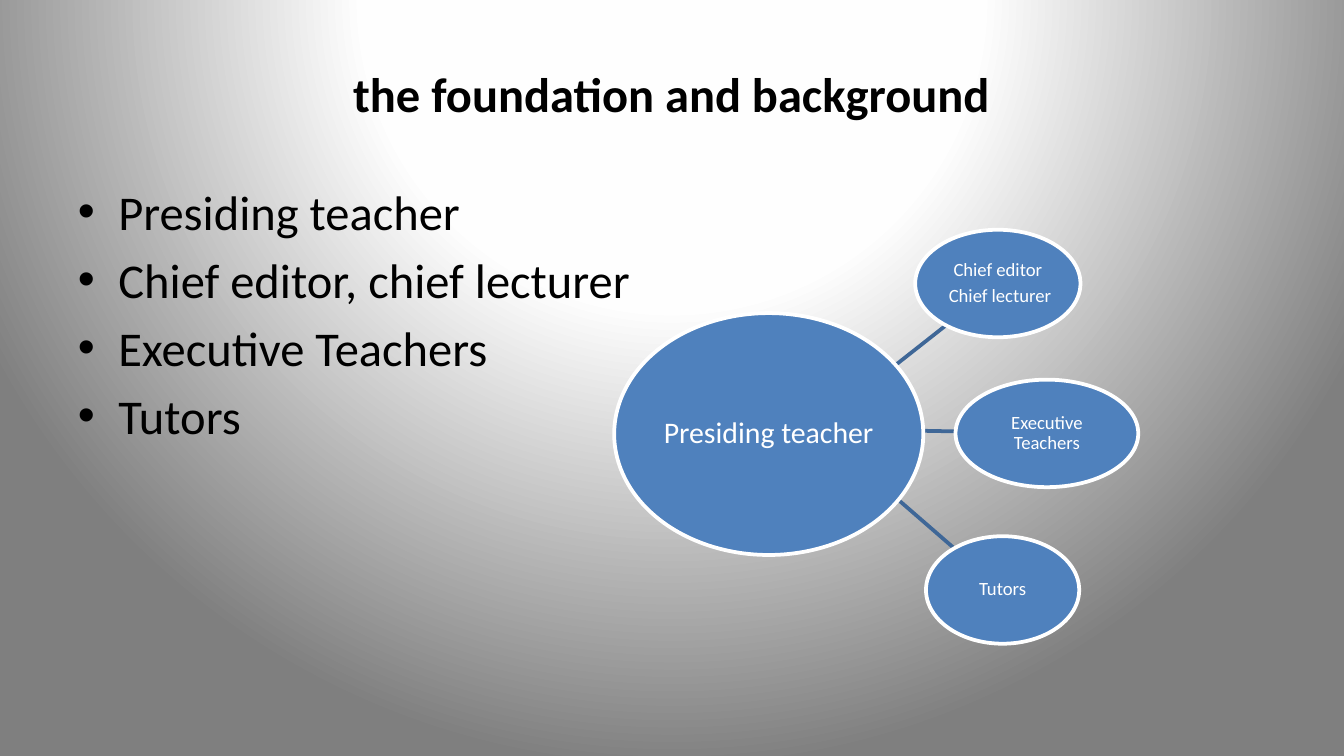
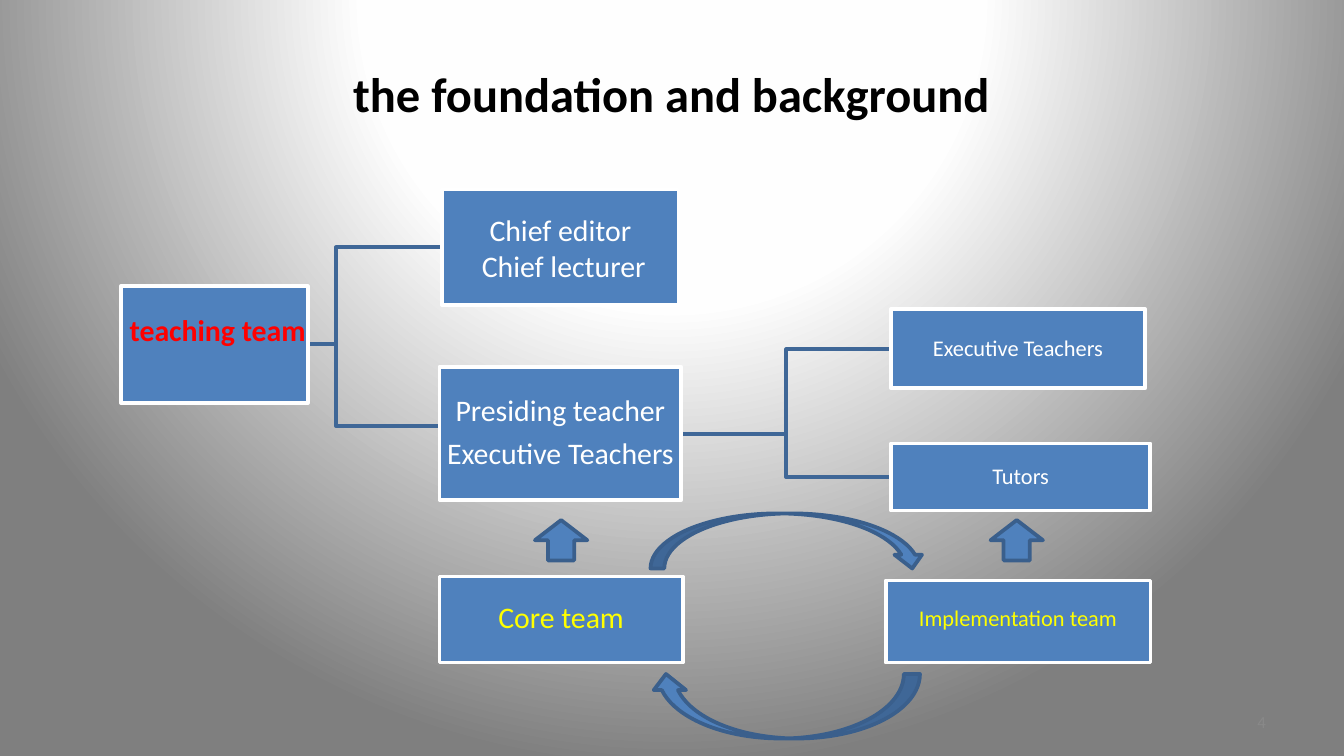
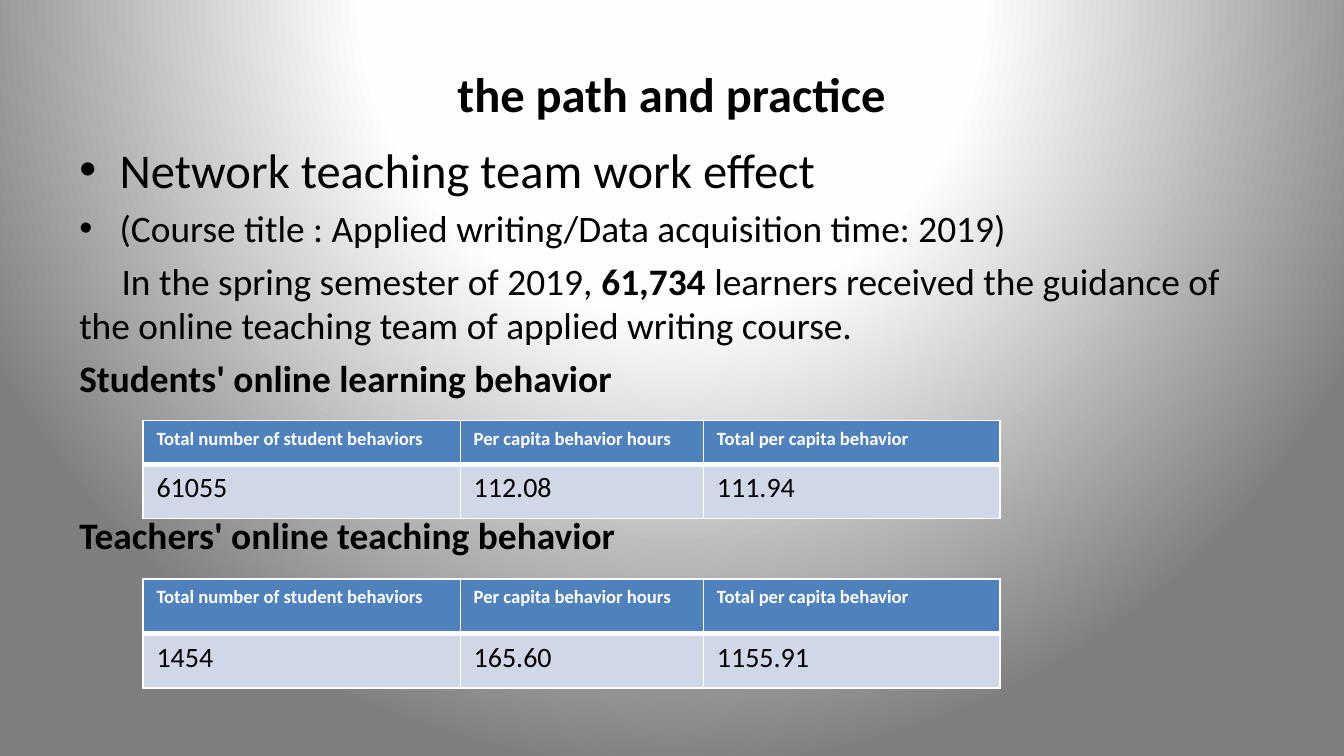
import dataclasses

import lxml.etree
import pptx
import pptx.dml.color
import pptx.enum.shapes
import pptx.enum.text
import pptx.oxml
import pptx.oxml.ns
import pptx.util

SHAPE = pptx.enum.shapes.MSO_SHAPE
ALIGN = pptx.enum.text.PP_ALIGN
ANCHOR = pptx.enum.text.MSO_ANCHOR
qn = pptx.oxml.ns.qn


@dataclasses.dataclass(frozen=True)
class Theme:
    font: str = "Calibri"
    ink: str = "000000"
    paper: str = "FFFFFF"
    node: str = "4F81BD"
    link: str = "3F6797"
    arrow_edge: str = "3A5F8C"
    alert: str = "FF0000"
    team: str = "FFFF00"
    data_row: str = "D0D8E8"
    page_number: str = "898989"
    glow: tuple = ((0, "FFFFFF"), (40, "FEFEFE"), (100, "7F7F7F"))
    title_size: int = 26
    body_size: int = 20
    node_size: int = 16
    value_size: int = 15
    branch_size: int = 12
    small_size: int = 10
    number_size: int = 9
    stroke: int = 2


THEME = Theme()
COLUMNS = 100
SLIDE_WIDTH = pptx.util.Inches(10)
SLIDE_HEIGHT = SLIDE_WIDTH * 9 // 16
TITLE_AREA = (5, 2.25, 90, 9.38)
FOUNDATION = "the foundation and background"


def cells(count):
    return round(SLIDE_WIDTH * count / COLUMNS)


def area(left, top, width, height):
    return [cells(value) for value in (left, top, width, height)]


def rgb(colour):
    return pptx.dml.color.RGBColor.from_string(colour)


def add_run(paragraph, text, size, colour=THEME.ink, bold=False):
    run = paragraph.add_run()
    run.text = text
    run.font.name = THEME.font
    run.font.size = pptx.util.Pt(size)
    run.font.bold = bold
    run.font.color.rgb = rgb(colour)


def next_paragraph(frame):
    first = frame.paragraphs[0]
    return frame.add_paragraph() if first.runs else first


def set_frame(frame, anchor, across, down):
    frame.word_wrap = True
    frame.auto_size = pptx.enum.text.MSO_AUTO_SIZE.NONE
    frame.vertical_anchor = anchor
    frame.margin_left = frame.margin_right = pptx.util.Inches(across)
    frame.margin_top = frame.margin_bottom = pptx.util.Inches(down)


def place(holder, spot):
    holder.left, holder.top, holder.width, holder.height = area(*spot)


def stroke(line, colour):
    line.color.rgb = rgb(colour)
    line.width = pptx.util.Pt(THEME.stroke)


def set_backdrop(master):
    fill = master.background.fill
    fill.gradient()
    gradient = master.element.find(".//" + qn("p:bgPr")).find(qn("a:gradFill"))
    for part in list(gradient):
        gradient.remove(part)
    stops = lxml.etree.SubElement(gradient, qn("a:gsLst"))
    for share, colour in THEME.glow:
        stop = lxml.etree.SubElement(stops, qn("a:gs"), pos=str(share * 1000))
        lxml.etree.SubElement(stop, qn("a:srgbClr"), val=colour)
    circle = lxml.etree.SubElement(gradient, qn("a:path"))
    circle.set("path", "circle")
    lxml.etree.SubElement(circle, qn("a:fillToRect"), l="50000", t="-80000",
                          r="50000", b="180000")


def add_slide(deck, layout, heading):
    slide = deck.slides.add_slide(deck.slide_layouts[layout])
    title = slide.shapes.title
    place(title, TITLE_AREA)
    set_frame(title.text_frame, ANCHOR.MIDDLE, 0.08, 0.04)
    paragraph = title.text_frame.paragraphs[0]
    paragraph.alignment = ALIGN.CENTER
    add_run(paragraph, heading, THEME.title_size, bold=True)
    return slide


def open_body(slide, spot):
    body = slide.placeholders[1]
    place(body, spot)
    set_frame(body.text_frame, ANCHOR.TOP, 0.08, 0.04)
    return body.text_frame


def indent(paragraph, left, first):
    properties = paragraph._p.get_or_add_pPr()
    properties.set("marL", str(cells(left)))
    properties.set("indent", str(cells(first)))
    return properties


def add_bullet(frame, text, size):
    paragraph = next_paragraph(frame)
    properties = indent(paragraph, 3, -3)
    lxml.etree.SubElement(properties, qn("a:buChar"), char="•")
    add_run(paragraph, text, size)


def add_plain(frame, runs, first=0, gap=None):
    paragraph = next_paragraph(frame)
    if gap:
        paragraph.space_before = pptx.util.Pt(gap)
    properties = indent(paragraph, 0, first)
    lxml.etree.SubElement(properties, qn("a:buNone"))
    for text, bold in runs:
        add_run(paragraph, text, THEME.body_size, bold=bold)


def add_figure(slide, kind, spot, edge):
    figure = slide.shapes.add_shape(kind, *area(*spot))
    figure.shadow.inherit = False
    figure.fill.solid()
    figure.fill.fore_color.rgb = rgb(THEME.node)
    stroke(figure.line, edge)
    return figure


def add_node(slide, kind, spot, lines, size, colour=THEME.paper, bold=False,
             tight=True):
    frame = add_figure(slide, kind, spot, THEME.paper).text_frame
    set_frame(frame, ANCHOR.MIDDLE, 0.01, 0.01)
    for text in lines:
        paragraph = next_paragraph(frame)
        paragraph.alignment = ALIGN.CENTER
        if tight:
            paragraph.line_spacing = 0.9
            if text != lines[-1]:
                paragraph.space_after = pptx.util.Pt(size * 0.35)
        add_run(paragraph, text, size, colour, bold)
    return frame


def add_spoke(slide, start, end):
    spoke = slide.shapes.add_connector(
        pptx.enum.shapes.MSO_CONNECTOR.STRAIGHT,
        *[cells(value) for value in start + end])
    stroke(spoke.line, THEME.link)
    lxml.etree.SubElement(spoke._element.spPr, qn("a:effectLst"))


def add_branch(slide, start, bend, end):
    corners = [(bend, start[1]), (bend, end[1]), end]
    builder = slide.shapes.build_freeform(*[cells(value) for value in start])
    builder.add_line_segments(
        [(cells(x), cells(y)) for x, y in corners], close=False)
    branch = builder.convert_to_shape()
    branch.shadow.inherit = False
    branch.fill.background()
    stroke(branch.line, THEME.link)


def add_page_number(slide, number):
    frame = slide.shapes.add_textbox(*area(72, 52.2, 23, 3)).text_frame
    set_frame(frame, ANCHOR.MIDDLE, 0.08, 0.04)
    paragraph = frame.paragraphs[0]
    paragraph.alignment = ALIGN.RIGHT
    add_run(paragraph, number, THEME.number_size, THEME.page_number)


def set_borders(cell, widths):
    properties = cell._tc.get_or_add_tcPr()
    for index, (side, width) in enumerate(widths.items()):
        border = lxml.etree.Element(
            qn("a:ln" + side), w=str(pptx.util.Pt(width)))
        solid = lxml.etree.SubElement(border, qn("a:solidFill"))
        lxml.etree.SubElement(solid, qn("a:srgbClr"), val=THEME.paper)
        properties.insert(index, border)


def add_behaviour_table(slide, top, row_heights, values):
    headings = ("Total number of student behaviors",
                "Per capita behavior hours", "Total per capita behavior")
    column_widths = (23.6, 18.1, 22.05)
    spot = area(10.65, top, sum(column_widths), sum(row_heights))
    table = slide.shapes.add_table(2, len(headings), *spot).table
    for column, width in zip(table.columns, column_widths):
        column.width = cells(width)
    for row, height in zip(table.rows, row_heights):
        row.height = cells(height)
    styles = (
        (headings, THEME.small_size, THEME.paper, True, THEME.node,
         {"L": 1, "R": 1, "T": 1, "B": 3}),
        (values, THEME.value_size, THEME.ink, False, THEME.data_row,
         {"L": 1, "R": 1, "T": 3, "B": 1}))
    for row, (texts, size, colour, bold, fill, borders) in enumerate(styles):
        for column, text in enumerate(texts):
            cell = table.cell(row, column)
            cell.fill.solid()
            cell.fill.fore_color.rgb = rgb(fill)
            set_borders(cell, borders)
            add_run(cell.text_frame.paragraphs[0], text, size, colour, bold)


def build_roles(deck):
    slide = add_slide(deck, 1, FOUNDATION)
    body = open_body(slide, (5, 13.13, 90, 37.1))
    for role in ("Presiding teacher", "Chief editor, chief lecturer",
                 "Executive Teachers", "Tutors"):
        add_bullet(body, role, THEME.title_size)

    satellites = (
        ((68.1, 17.1, 12.3, 8), ["Chief editor", " Chief lecturer"],
         (65.7, 27.9), (70.4, 24.2)),
        ((71.1, 28.25, 13.6, 8), ["Executive Teachers"],
         (65.7, 32), (71.1, 32.1)),
        ((68.9, 39.9, 11.4, 8), ["Tutors"], (65.7, 36.2), (71, 40.8)))
    for spot, lines, start, end in satellites:
        add_spoke(slide, start, end)
    add_node(slide, SHAPE.OVAL, (45.7, 23.3, 23, 18), ["Presiding teacher"],
             THEME.node_size)
    for spot, lines, start, end in satellites:
        add_node(slide, SHAPE.OVAL, spot, lines, THEME.small_size)


def build_teams(deck):
    slide = add_slide(deck, 5, FOUNDATION)
    forks = (((22.9, 25.6), 25, ((32.9, 31.7), (32.9, 18.4))),
             ((50.7, 32.3), 58.5, ((66.3, 35.5), (66.3, 26))))
    for start, bend, ends in forks:
        for end in ends:
            add_branch(slide, start, bend, end)

    box = SHAPE.RECTANGLE
    root = add_node(slide, box, (9, 21.3, 13.9, 8.7), [" teaching team"],
                    THEME.node_size, THEME.alert, bold=True, tight=False)
    root.margin_bottom = cells(2.4)
    add_node(slide, box, (32.9, 14.1, 17.6, 8.6),
             ["Chief editor", " Chief lecturer"], THEME.node_size, tight=False)
    add_node(slide, box, (32.7, 27.3, 18, 9.9),
             ["Presiding teacher", "Executive Teachers"], THEME.node_size)
    add_node(slide, box, (66.3, 23, 18.9, 5.9), ["Executive Teachers"],
             THEME.branch_size)
    add_node(slide, box, (66.3, 33, 19.3, 5), ["Tutors"], THEME.branch_size)
    implementation = add_node(
        slide, box, (65.9, 43.2, 19.7, 6.1), ["Implementation team"],
        THEME.branch_size, THEME.team, tight=False)
    implementation.margin_bottom = cells(0.7)
    core = add_node(slide, box, (32.7, 42.9, 18.1, 6.4), ["Core team"],
                    THEME.node_size, THEME.team, tight=False)
    core.margin_bottom = cells(0.6)

    for left in (73.7, 39.8):
        add_figure(slide, SHAPE.UP_ARROW, (left, 38.7, 3.9, 3),
                   THEME.arrow_edge)
    for spot, turn in (((56.6, 30, 4.1, 20.5), 270),
                       ((56, 42.5, 4.8, 20.1), 90)):
        cycle = add_figure(slide, SHAPE.CURVED_LEFT_ARROW, spot,
                           THEME.arrow_edge)
        cycle.rotation = turn
    add_page_number(slide, "4")


def build_practice(deck):
    slide = add_slide(deck, 1, "the path and practice")
    body = open_body(slide, (5.1, 10, 90, 44.1))
    add_bullet(body, "Network teaching team work effect", THEME.title_size)
    add_bullet(body, "(Course title : Applied writing/Data acquisition "
               "time: 2019)", THEME.body_size)
    add_plain(body, (
        ("In the spring semester of 2019, ", False),
        ("61,734 ", True),
        ("learners received the guidance of the online teaching team of "
         "applied writing course.", False)), first=3.15)
    add_plain(body, [("Students' online learning behavior", True)])
    add_plain(body, [("Teachers' online teaching behavior", True)], gap=60)
    add_behaviour_table(slide, 31.3, (3.25, 4.05),
                        ("61055", "112.08", "111.94"))
    add_behaviour_table(slide, 43.1, (4.05, 4.05),
                        ("1454", "165.60", "1155.91"))


def main():
    deck = pptx.Presentation()
    deck.slide_width = SLIDE_WIDTH
    deck.slide_height = SLIDE_HEIGHT
    set_backdrop(deck.slide_master)
    build_roles(deck)
    build_teams(deck)
    build_practice(deck)
    deck.save("out.pptx")


if __name__ == "__main__":
    main()
